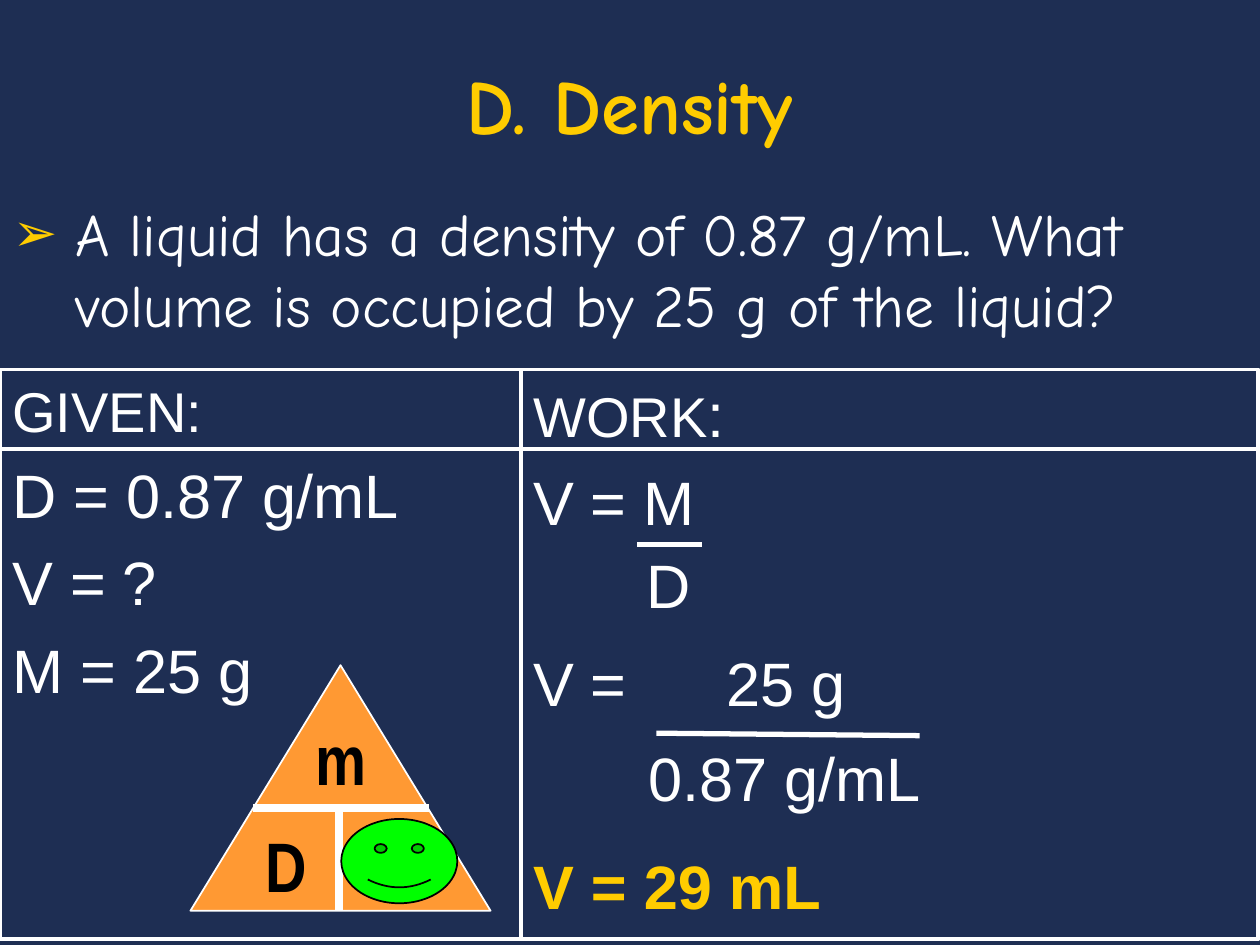
from lxml import etree
from pptx import Presentation
from pptx.dml.color import RGBColor
from pptx.enum.shapes import MSO_CONNECTOR, MSO_SHAPE
from pptx.enum.text import MSO_ANCHOR, MSO_AUTO_SIZE, PP_ALIGN
from pptx.oxml.ns import qn
from pptx.util import Cm, Pt

LINE = MSO_CONNECTOR.STRAIGHT
RECTANGLE = MSO_SHAPE.RECTANGLE
TRIANGLE = MSO_SHAPE.ISOSCELES_TRIANGLE
SMILEY = MSO_SHAPE.SMILEY_FACE
LEFT, CENTER = PP_ALIGN.LEFT, PP_ALIGN.CENTER
TOP, BOTTOM = MSO_ANCHOR.TOP, MSO_ANCHOR.BOTTOM
NO_AUTOFIT = MSO_AUTO_SIZE.NONE

NAVY = RGBColor(0x1E, 0x2E, 0x53)
GOLD = RGBColor(0xFF, 0xCC, 0x00)
WHITE = RGBColor(0xFF, 0xFF, 0xFF)
ORANGE = RGBColor(0xFF, 0x99, 0x33)
GREEN = RGBColor(0x00, 0xFF, 0x00)
BLACK = RGBColor(0x00, 0x00, 0x00)

SLIDE_WIDTH, SLIDE_HEIGHT = 25.4, 19.05
TABLE_TOP, TABLE_BOTTOM = 7.45, 18.94
HEADER_BOTTOM = 9.05
COLUMN_X = 10.5
FIRST_SPACE = 3.5


def write_text(paragraph, text, font="Arial", size=35, color=WHITE, bold=False,
               align=LEFT, before=FIRST_SPACE, indent=0, tab=None):
    """Add a run of text and format its paragraph."""
    paragraph.alignment = align
    paragraph.space_before = Pt(before)
    properties = paragraph._p.get_or_add_pPr()
    if indent:
        properties.set("marL", str(Cm(indent)))
    if tab:
        tabs = etree.SubElement(properties, qn("a:tabLst"))
        etree.SubElement(tabs, qn("a:tab"), pos=str(Cm(tab)), algn="l")
    run = paragraph.add_run()
    run.text = text
    run.font.name = font
    run.font.size = Pt(size)
    run.font.bold = bold
    run.font.color.rgb = color


def place(shape, left, top, width, height):
    shape.left, shape.top = Cm(left), Cm(top)
    shape.width, shape.height = Cm(width), Cm(height)


def prepare_frame(shape, anchor=TOP):
    frame = shape.text_frame
    frame.word_wrap = True
    frame.auto_size = NO_AUTOFIT
    frame.vertical_anchor = anchor
    return frame


def add_text_box(slide, left, top, width, height, lines):
    """Add a text box; each line is a text and its format."""
    box = slide.shapes.add_textbox(Cm(left), Cm(top), Cm(width), Cm(height))
    frame = prepare_frame(box)
    for index, (text, options) in enumerate(lines):
        paragraph = frame.add_paragraph() if index else frame.paragraphs[0]
        write_text(paragraph, text, **options)
    return box


def add_shape(slide, kind, left, top, width, height, fill, line, weight=1):
    shape = slide.shapes.add_shape(kind, Cm(left), Cm(top), Cm(width), Cm(height))
    shape.shadow.inherit = False
    shape.fill.solid()
    shape.fill.fore_color.rgb = fill
    shape.line.color.rgb = line
    shape.line.width = Pt(weight)
    return shape


def add_line(slide, x1, y1, x2, y2, weight=2.25):
    line = slide.shapes.add_connector(LINE, Cm(x1), Cm(y1), Cm(x2), Cm(y2))
    line.line.color.rgb = WHITE
    line.line.width = Pt(weight)
    etree.SubElement(line._element.spPr, qn("a:effectLst"))


def add_bullet(paragraph, character, color, percent, hanging):
    properties = paragraph._p.get_or_add_pPr()
    properties.set("marL", str(Cm(hanging)))
    properties.set("indent", str(-Cm(hanging)))
    bullet_color = etree.SubElement(properties, qn("a:buClr"))
    etree.SubElement(bullet_color, qn("a:srgbClr"), val=str(color))
    etree.SubElement(properties, qn("a:buSzPct"), val=str(percent * 1000))
    etree.SubElement(properties, qn("a:buChar"), char=character)


def add_heading(slide):
    title, body = slide.placeholders
    place(title, 1.9, 0.81, 21.6, 2.34)
    write_text(prepare_frame(title, BOTTOM).paragraphs[0], "D. Density",
               font="Comic Neue", size=44, color=GOLD, bold=True,
               align=CENTER, before=0)
    place(body, 0, 3.84, SLIDE_WIDTH, 5.61)
    question = prepare_frame(body).paragraphs[0]
    write_text(question, "A liquid has a density of 0.87 g/mL. "
               "What volume is occupied by 25 g of the liquid?",
               font="Comic Neue", size=34)
    add_bullet(question, "➢", GOLD, 90, 1.27)


def add_work_area(slide):
    # Frame, given values and dividing lines
    add_shape(slide, RECTANGLE, 0, TABLE_TOP, 25.37, TABLE_BOTTOM - TABLE_TOP,
              NAVY, WHITE, 2.25)
    add_text_box(slide, 0, 7.47, COLUMN_X, 7.21, [
        ("GIVEN:", {"size": 32}),
        ("D = 0.87 g/mL", {"before": 7.5}),
        ("V = ?", {"before": 8}),
        ("M = 25 g", {"before": 8}),
    ])
    add_line(slide, COLUMN_X, TABLE_TOP, COLUMN_X, TABLE_BOTTOM)
    add_line(slide, 0, HEADER_BOTTOM, SLIDE_WIDTH, HEADER_BOTTOM)

    # Formula
    width = SLIDE_WIDTH - COLUMN_X
    work = add_text_box(slide, COLUMN_X, 7.47, width, 5.13, [
        ("WORK", {"size": 32}),
        ("V = M", {"before": 8}),
        ("D", {"before": 5.5, "indent": 2.28}),
    ])
    write_text(work.text_frame.paragraphs[0], ":")
    add_line(slide, 12.85, 10.97, 14.15, 10.97, 3)

    # Substituted values and answer
    add_text_box(slide, COLUMN_X, 12.88, width, 3.78, [
        ("V =\t25 g", {"tab": 3.9}),
        ("0.87 g/mL", {"before": 12.5, "indent": 2.32}),
    ])
    add_line(slide, 13.23, 14.78, 18.54, 14.83, 3)
    add_text_box(slide, COLUMN_X, 16.97, width, 1.7,
                 [("V = 29 mL", {"color": GOLD, "bold": True})])


def add_density_triangle(slide):
    add_shape(slide, TRIANGLE, 3.84, 13.41, 6.05, 4.95, ORANGE, WHITE)
    add_line(slide, 5.1, 16.28, 8.64, 16.28, 4.5)
    add_line(slide, 6.83, 16.28, 6.83, 18.34, 4.5)
    letter_format = {"font": "Arial Narrow", "size": 40, "color": BLACK,
                     "bold": True, "align": CENTER}
    for letter, left, top in (("D", 5.08, 16.46), ("m", 6.2, 14.3)):
        box = add_text_box(slide, left, top, 1.37, 1.96, [(letter, letter_format)])
        box.text_frame.margin_left = box.text_frame.margin_right = 0
    smiley = add_shape(slide, SMILEY, 6.88, 16.51, 2.34, 1.7, GREEN, BLACK)
    smiley.adjustments[0] = 0.05


def main():
    presentation = Presentation()
    presentation.slide_width = Cm(SLIDE_WIDTH)
    presentation.slide_height = Cm(SLIDE_HEIGHT)
    slide = presentation.slides.add_slide(presentation.slide_layouts[1])
    slide.background.fill.solid()
    slide.background.fill.fore_color.rgb = NAVY
    add_heading(slide)
    add_work_area(slide)
    add_density_triangle(slide)
    presentation.save("out.pptx")


if __name__ == "__main__":
    main()
